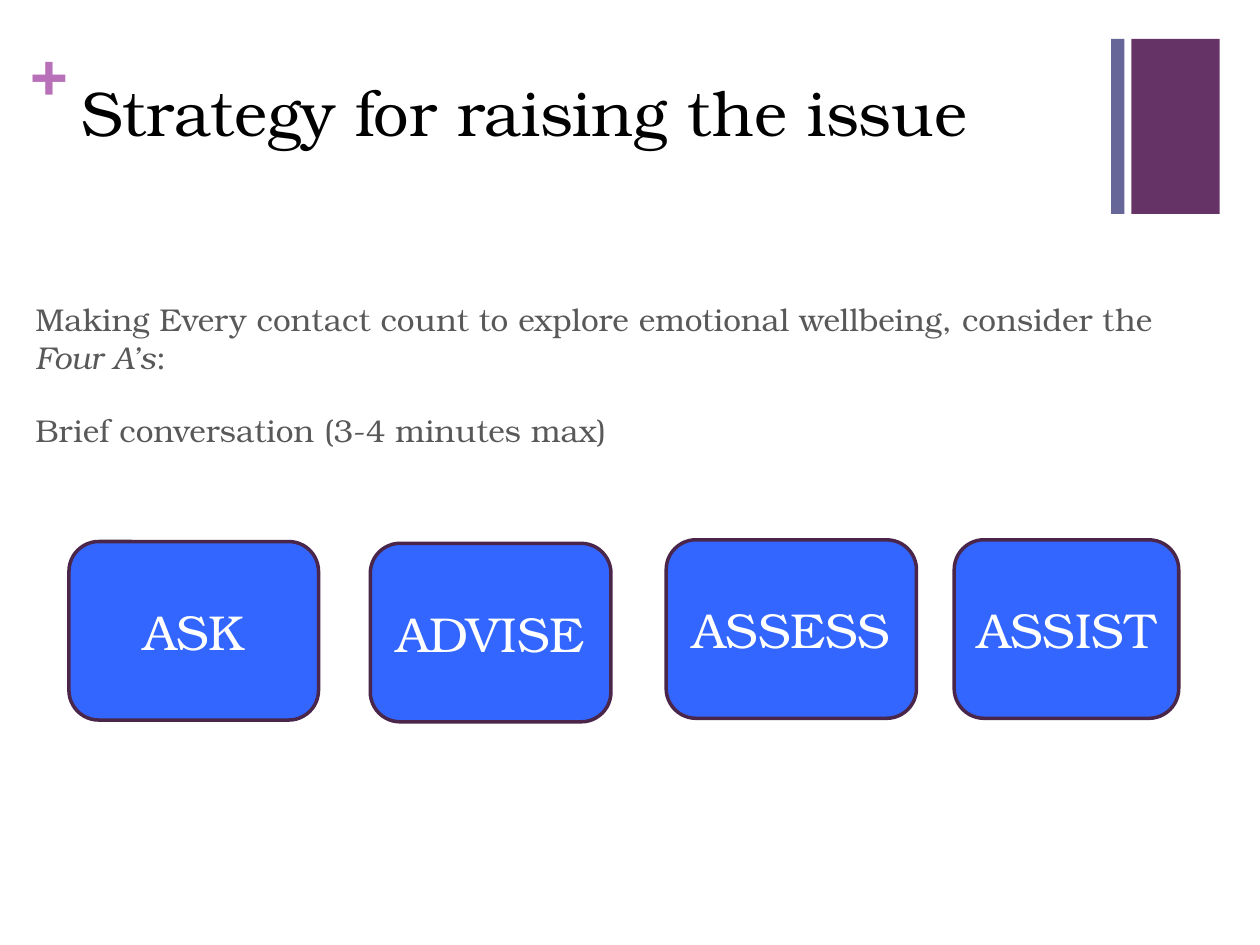
"""Build the slide on raising the issue with the Four A's."""
import pptx
import pptx.dml.color
import pptx.enum.shapes
import pptx.enum.text
import pptx.oxml.xmlchemy
import pptx.util
from lxml import etree

Pt = pptx.util.Pt
RGBColor = pptx.dml.color.RGBColor
SHAPES = pptx.enum.shapes.MSO_SHAPE
ALIGN = pptx.enum.text.PP_ALIGN
ANCHOR = pptx.enum.text.MSO_ANCHOR

FONT = "TeX Gyre Bonum"
WHITE = RGBColor(0xFF, 0xFF, 0xFF)
BLACK = RGBColor(0x00, 0x00, 0x00)
GREY = RGBColor(0x59, 0x59, 0x59)
PURPLE = RGBColor(0x66, 0x33, 0x66)
SLATE = RGBColor(0x66, 0x66, 0x99)
ORCHID = RGBColor(0xB8, 0x70, 0xB8)
BLUE = RGBColor(0x33, 0x66, 0xFF)
PLUM = RGBColor(0x4B, 0x26, 0x4B)

TITLE = "Strategy for raising the issue"
BODY = [
    [
        ("Making Every contact count to explore emotional wellbeing, consider the ", False),
        ("Four A’s", True),
        (":", False),
    ],
    [("Brief conversation (3-4 minutes max)", False)],
]
BARS = [(646.5, 50.5, PURPLE), (635, 7.5, SLATE)]
BAR_TOP, BAR_HEIGHT = 22.3, 100
STEPS = [
    ("ASK", 39.4, 309.5, 142.6),
    ("ADVISE", 211.6, 310.5, 137.5),
    ("ASSESS", 380.7, 308.5, 143),
    ("ASSIST", 545.3, 308.5, 128.3),
]
STEP_HEIGHT = 102


def place(box, left, top, width, height):
    box.left, box.top, box.width, box.height = map(Pt, (left, top, width, height))


def paint(shape, color):
    shape.fill.solid()
    shape.fill.fore_color.rgb = color


def add_span(para, text, size, color, italic=False, bold=False):
    span = para.add_run()
    span.text = text
    font = span.font
    font.name, font.size, font.italic, font.bold = FONT, Pt(size), italic, bold
    font.color.rgb = color


def add_block(page, kind, left, top, width, height, color):
    block = page.shapes.add_shape(kind, Pt(left), Pt(top), Pt(width), Pt(height))
    block.shadow.inherit = False
    paint(block, color)
    return block


def fill_placeholder(box, frame_place):
    place(box, *frame_place)
    paint(box, WHITE)
    frame = box.text_frame
    frame.auto_size = pptx.enum.text.MSO_AUTO_SIZE.NONE
    frame.vertical_anchor = ANCHOR.TOP
    frame.word_wrap = True
    return frame


def write_title(page):
    frame = fill_placeholder(page.shapes.title, (39.6, 38.2, 594.7, 87.8))
    para = frame.paragraphs[0]
    para.alignment = ALIGN.LEFT
    add_span(para, TITLE, 36, BLACK)


def write_body(page):
    frame = fill_placeholder(page.placeholders[1], (13, 122.4, 688.3, 356.4))
    frame.margin_top = Pt(49)
    for index, spans in enumerate(BODY):
        para = frame.add_paragraph() if index else frame.paragraphs[0]
        properties = para._p.get_or_add_pPr()
        properties.set("marL", "0")
        properties.set("indent", "0")
        etree.SubElement(properties, pptx.oxml.ns.qn("a:buNone"))
        para.space_before = Pt(20 if index else 0)
        for text, italic in spans:
            add_span(para, text, 18, GREY, italic)


def add_decoration(page):
    for left, width, color in BARS:
        bar = add_block(page, SHAPES.RECTANGLE, left, BAR_TOP, width, BAR_HEIGHT, color)
        bar.line.fill.background()
    plus = page.shapes.add_textbox(Pt(17.3), Pt(18), Pt(20.9), Pt(43.9))
    frame = plus.text_frame
    frame.word_wrap = True
    frame.margin_left = frame.margin_right = frame.margin_top = frame.margin_bottom = 0
    add_span(frame.paragraphs[0], "+", 36, ORCHID, bold=True)


def add_steps(page):
    for name, left, top, width in STEPS:
        step = add_block(page, SHAPES.ROUNDED_RECTANGLE, left, top, width, STEP_HEIGHT, BLUE)
        step.line.color.rgb = PLUM
        step.line.width = Pt(2)
        step.text_frame.vertical_anchor = ANCHOR.MIDDLE
        para = step.text_frame.paragraphs[0]
        para.alignment = ALIGN.CENTER
        add_span(para, name, 28, WHITE)


def main():
    deck = pptx.Presentation()
    deck.slide_width, deck.slide_height = Pt(720), Pt(540)
    page = deck.slides.add_slide(deck.slide_layouts[1])
    write_title(page)
    write_body(page)
    add_decoration(page)
    add_steps(page)
    deck.save("out.pptx")


if __name__ == "__main__":
    main()
